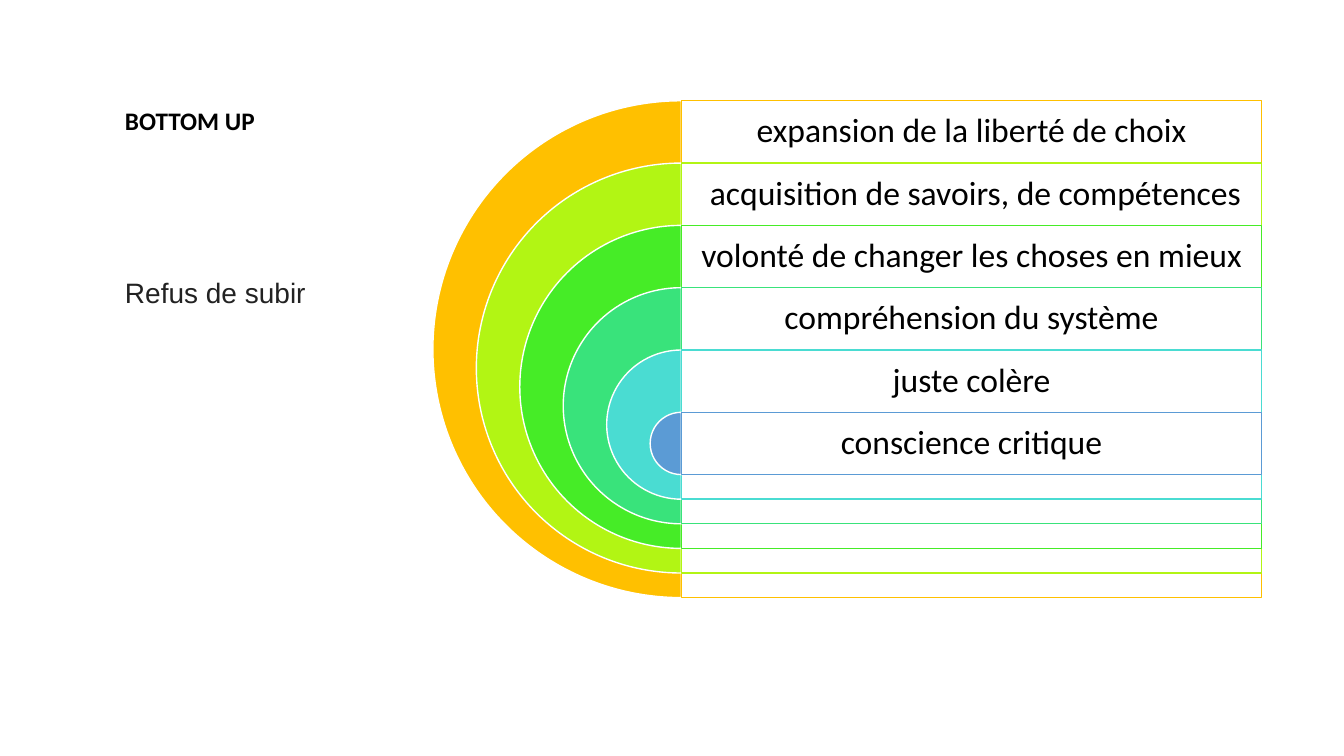
from dataclasses import dataclass

from lxml import etree
from pptx import Presentation
from pptx import util as u
from pptx.dml.color import RGBColor
from pptx.enum import shapes, text
from pptx.oxml import ns


@dataclass(frozen=True)
class Theme:
    white: str = "FFFFFF"
    black: str = "000000"
    grey: str = "222222"
    level_size: int = 24
    note_size: int = 20
    heading_size: int = 18
    body_font: str = "Calibri"
    note_font: str = "Arial"


THEME = Theme()

LEVELS = [
    ("expansion de la liberté de choix", "FFC000"),
    (" acquisition de savoirs, de compétences", "B2F514"),
    ("volonté de changer les choses en mieux", "46EC27"),
    ("compréhension du système", "39E37B"),
    ("juste colère", "4ADCD2"),
    ("conscience critique", "5B9BD5"),
]

AXIS, TOP, PANEL_WIDTH = 17.17, 2.54, 14.63
ROW_HEIGHT, OUTER_DIAMETER = 1.57, 12.52
SHRINK = (OUTER_DIAMETER - ROW_HEIGHT) / (len(LEVELS) - 1)


def apply(target, values):
    for name, value in values.items():
        setattr(target, name, value)


def add_filled(parent, kind, place, fill, line, opacity=100):
    shape = parent.shapes.add_shape(kind, *map(u.Cm, place))
    shape.shadow.inherit = False
    shape.fill.solid()
    shape.fill.fore_color.rgb = RGBColor.from_string(fill)
    shape.line.color.rgb = RGBColor.from_string(line)
    shape.line.width = u.Pt(1)
    if opacity < 100:
        color = shape.element.spPr.find(ns.qn("a:solidFill"))[0]
        etree.SubElement(color, ns.qn("a:alpha"), val=str(opacity * 1000))
    return shape


def add_text(parent, words, place, font, color, frame=None, para=None):
    box = parent.shapes.add_textbox(*map(u.Cm, place))
    apply(box.text_frame, {"word_wrap": True, **(frame or {})})
    line = box.text_frame.paragraphs[0]
    apply(line, para or {})
    span = line.add_run()
    span.text = words
    apply(span.font, font)
    span.font.color.rgb = RGBColor.from_string(color)


def add_level(group, index, words, color):
    top = TOP + index * ROW_HEIGHT
    diameter = OUTER_DIAMETER - index * SHRINK
    pie = add_filled(
        group, shapes.MSO_SHAPE.PIE,
        (AXIS - diameter / 2, top, diameter, diameter), color, THEME.white)
    pie.adjustments[0], pie.adjustments[1] = 54, 162
    add_filled(
        group, shapes.MSO_SHAPE.RECTANGLE,
        (AXIS, top, PANEL_WIDTH, diameter), THEME.white, color, opacity=90)
    inset = u.Cm(0.25)
    add_text(
        group, words, (AXIS, top, PANEL_WIDTH, ROW_HEIGHT),
        {"name": THEME.body_font, "size": u.Pt(THEME.level_size)}, THEME.black,
        {"vertical_anchor": text.MSO_ANCHOR.MIDDLE,
         "margin_left": inset, "margin_right": inset,
         "margin_top": inset, "margin_bottom": inset},
        {"alignment": text.PP_ALIGN.CENTER, "line_spacing": 0.9})


def main():
    deck = Presentation()
    apply(deck, {"slide_width": u.Cm(33.87), "slide_height": u.Cm(19.05)})
    page = deck.slides.add_slide(deck.slide_layouts[6])

    group = page.shapes.add_group_shape()
    for index, (words, color) in enumerate(LEVELS):
        add_level(group, index, words, color)

    grow = {"auto_size": text.MSO_AUTO_SIZE.SHAPE_TO_FIT_TEXT}
    add_text(
        page, "Refus de subir", (2.9, 6.83, 5.69, 1.11),
        {"name": THEME.note_font, "size": u.Pt(THEME.note_size)},
        THEME.grey, grow)
    add_text(
        page, "BOTTOM UP", (2.9, 2.52, 4.6, 1.03),
        {"name": THEME.body_font, "size": u.Pt(THEME.heading_size), "bold": True},
        THEME.black, grow)

    deck.save("out.pptx")


if __name__ == "__main__":
    main()
